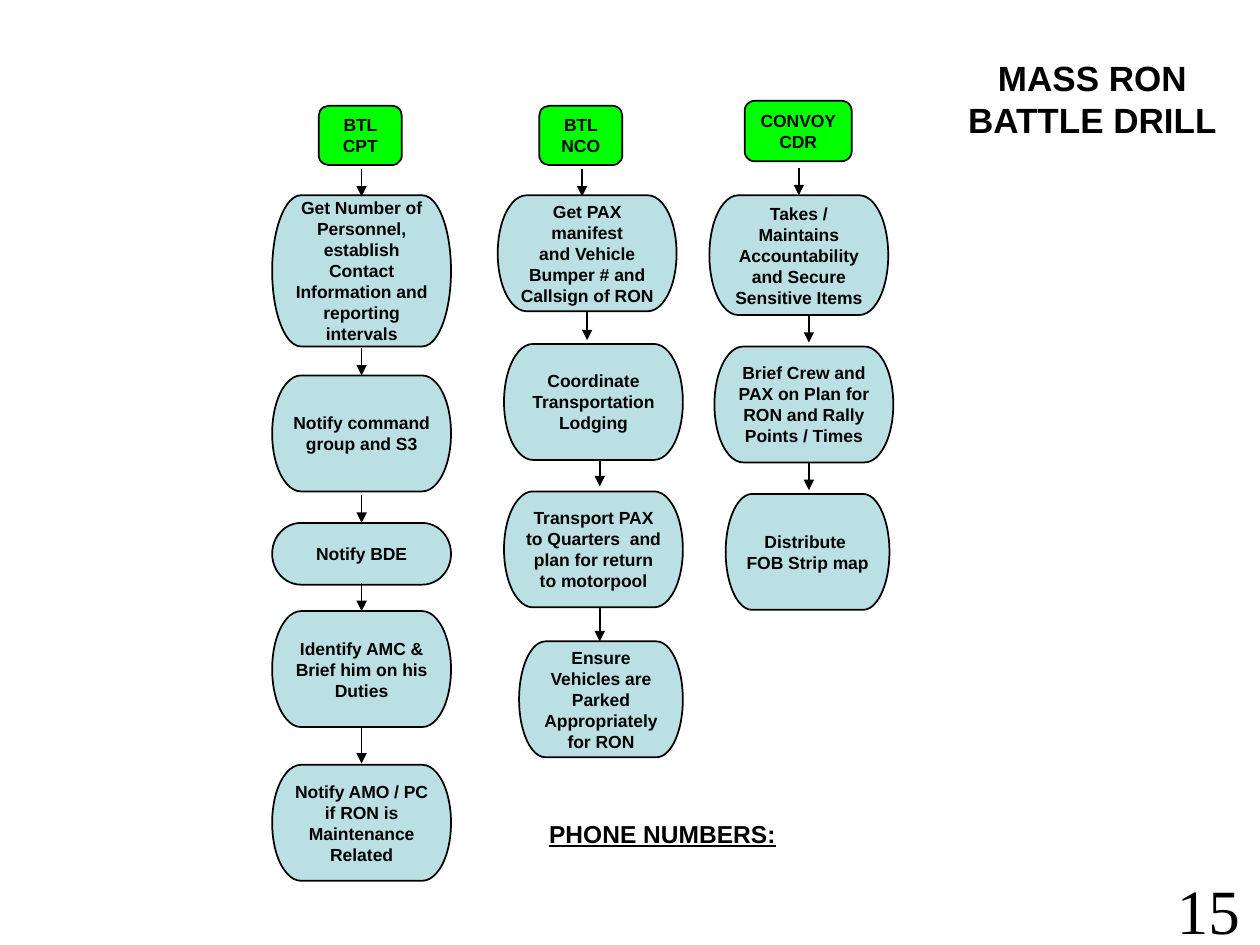
"""Build the MASS RON battle drill slide: three role columns of linked steps."""
import pptx
import pptx.dml.color
import pptx.enum.shapes
import pptx.enum.text
import pptx.oxml.ns
import pptx.util
import lxml.etree
from dataclasses import dataclass

Inches = pptx.util.Inches
Shape = pptx.enum.shapes.MSO_SHAPE
Align = pptx.enum.text.PP_ALIGN
Anchor = pptx.enum.text.MSO_ANCHOR


@dataclass(frozen=True)
class Theme:
    role: str = "00FF00"
    step: str = "BBE0E3"
    ink: str = "000000"
    font: str = "Arial"
    number_font: str = "Times New Roman"
    title_size: int = 20
    heading_size: int = 14
    body_size: int = 10
    number_size: int = 36
    line_width: int = 1


THEME = Theme()
STEP_HEIGHT = 0.92

COLUMNS = [
    {
        "role": ("BTL CPT", 2.53, 0.84, 0.66, 0.47),
        "steps": [
            (["Get Number of Personnel, establish Contact Information and reporting intervals"],
             2.16, 1.55, 1.42, 1.2),
            (["Notify command group and S3"], 2.16, 2.98, 1.42, STEP_HEIGHT),
            (["Notify BDE"], 2.16, 4.15, 1.42, 0.49),
            (["Identify AMC & Brief him on his Duties"], 2.16, 4.85, 1.42, STEP_HEIGHT),
            (["Notify AMO / PC if RON is Maintenance Related"], 2.16, 6.07, 1.42, STEP_HEIGHT),
        ],
        "arrows": [(2.87, 1.34, 1.56), (2.87, 2.76, 2.98), (2.87, 3.93, 4.15),
                   (2.87, 4.63, 4.85), (2.87, 5.77, 6.06)],
    },
    {
        "role": ("BTL NCO", 4.28, 0.84, 0.66, 0.47),
        "steps": [
            (["Get PAX manifest", "and Vehicle Bumper # and Callsign of RON"],
             3.95, 1.55, 1.42, STEP_HEIGHT),
            (["Coordinate Transportation", "Lodging"], 4, 2.73, 1.42, STEP_HEIGHT),
            (["Transport PAX to Quarters  and plan for return", "to motorpool"],
             4, 3.9, 1.42, STEP_HEIGHT),
            (["Ensure Vehicles are Parked Appropriately for RON"], 4.12, 5.09, 1.3, STEP_HEIGHT),
        ],
        "arrows": [(4.62, 1.34, 1.56), (4.66, 2.48, 2.7), (4.76, 3.65, 3.86), (4.76, 4.82, 5.09)],
    },
    {
        "role": ("CONVOY CDR", 5.91, 0.8, 0.85, 0.48),
        "steps": [
            (["Takes / Maintains", "Accountability and Secure Sensitive Items"],
             5.63, 1.55, 1.42, 0.95),
            (["Brief Crew and PAX on Plan for RON and Rally Points / Times"],
             5.67, 2.75, 1.42, STEP_HEIGHT),
            (["Distribute  FOB Strip map"], 5.76, 3.92, 1.3, STEP_HEIGHT),
        ],
        "arrows": [(6.34, 1.33, 1.55), (6.42, 2.5, 2.72), (6.42, 3.67, 3.89)],
    },
]
TITLE = (["MASS RON", "BATTLE DRILL"], (7.42, 0.4, 2.5, 0.77))
PHONES = (["PHONE NUMBERS:"], (4.26, 6.45, 2.83, 0.84))
NUMBER = (["15"], (9.18, 6.87, 0.82, 0.63))


def colour(value):
    return pptx.dml.color.RGBColor.from_string(value)


def write(shape, lines, size, anchor=Anchor.TOP, align=Align.CENTER, font=THEME.font,
          bold=True, underline=None, inset=0.05, wrap=True):
    frame = shape.text_frame
    frame.word_wrap = wrap
    frame.auto_size = pptx.enum.text.MSO_AUTO_SIZE.NONE
    frame.vertical_anchor = anchor
    frame.margin_left = frame.margin_right = Inches(0.1)
    frame.margin_top = frame.margin_bottom = Inches(inset)
    for index, line in enumerate(lines):
        para = frame.add_paragraph() if index else frame.paragraphs[0]
        para.alignment = align
        para.line_spacing = 1.0
        para.space_before = pptx.util.Pt(0)
        span = para.add_run()
        span.text = line
        span.font.name = font
        span.font.size = pptx.util.Pt(size)
        span.font.bold = bold
        span.font.underline = underline
        span.font.color.rgb = colour(THEME.ink)


def outline(line):
    line.color.rgb = colour(THEME.ink)
    line.width = pptx.util.Pt(THEME.line_width)


def add_box(slide, kind, fill, lines, bounds, inset):
    box = slide.shapes.add_shape(kind, *map(Inches, bounds))
    box.shadow.inherit = False
    box.fill.solid()
    box.fill.fore_color.rgb = colour(fill)
    outline(box.line)
    write(box, lines, THEME.body_size, Anchor.MIDDLE, inset=inset)


def add_arrow(slide, x, top, bottom):
    arrow = slide.shapes.add_connector(pptx.enum.shapes.MSO_CONNECTOR.STRAIGHT,
                                       *map(Inches, (x, top, x, bottom)))
    outline(arrow.line)
    qn = pptx.oxml.ns.qn
    lxml.etree.SubElement(arrow.line._get_or_add_ln(), qn("a:tailEnd"), type="triangle")
    lxml.etree.SubElement(arrow._element.spPr, qn("a:effectLst"))


def add_label(slide, content, size, **style):
    lines, bounds = content
    write(slide.shapes.add_textbox(*map(Inches, bounds)), lines, size, **style)


def main():
    deck = pptx.Presentation()
    deck.slide_width, deck.slide_height = Inches(10), Inches(7.5)
    slide = deck.slides.add_slide(deck.slide_layouts[5])

    lines, bounds = TITLE
    title = slide.shapes.title
    title.left, title.top, title.width, title.height = map(Inches, bounds)
    write(title, lines, THEME.title_size)

    for column in COLUMNS:
        role, *bounds = column["role"]
        add_box(slide, Shape.FLOWCHART_ALTERNATE_PROCESS, THEME.role, [role], bounds, 0.05)
        for lines, *bounds in column["steps"]:
            add_box(slide, Shape.FLOWCHART_TERMINATOR, THEME.step, lines, bounds, 0)
        for arrow in column["arrows"]:
            add_arrow(slide, *arrow)

    add_label(slide, PHONES, THEME.heading_size, align=Align.LEFT, underline=True)
    add_label(slide, NUMBER, THEME.number_size, font=THEME.number_font, bold=False, wrap=False)
    deck.save("out.pptx")


if __name__ == "__main__":
    main()
